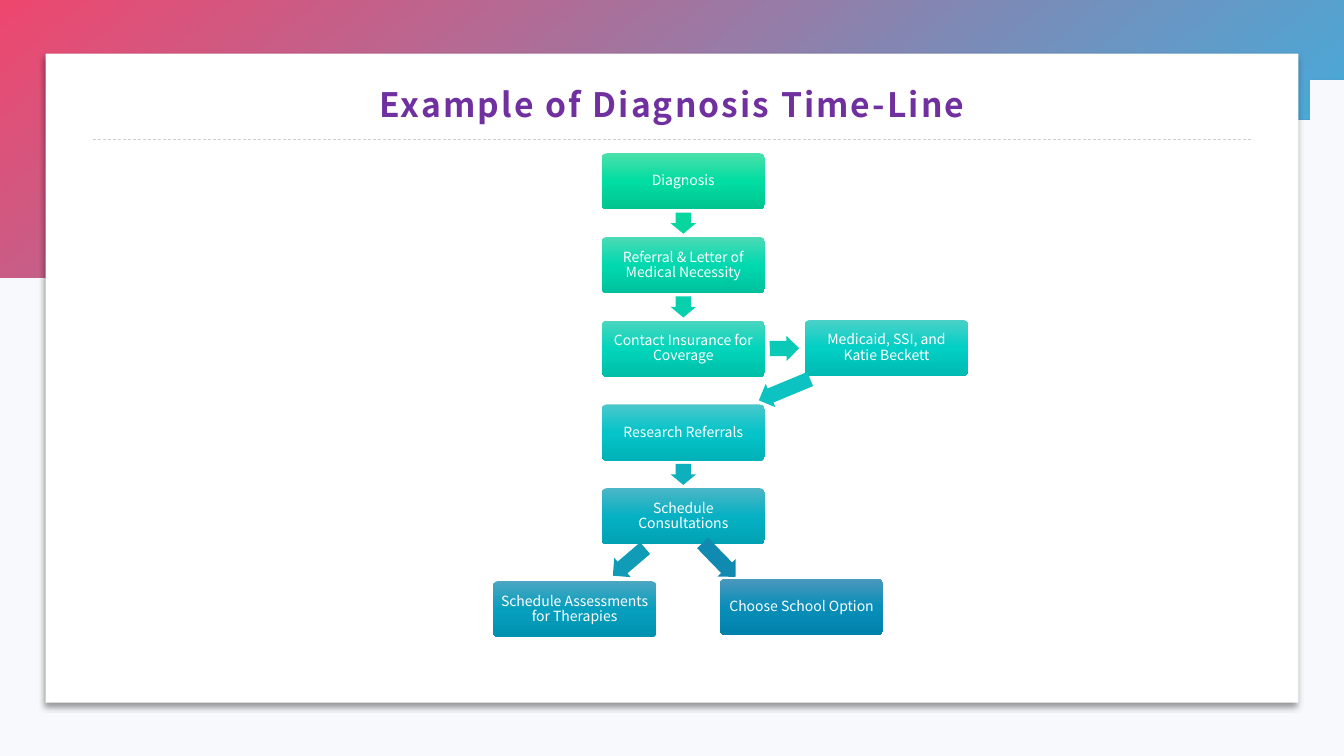
from copy import deepcopy

from lxml import etree
from pptx import Presentation
from pptx.dml.color import RGBColor
from pptx.enum.dml import MSO_LINE
from pptx.enum.shapes import MSO_CONNECTOR, MSO_SHAPE
from pptx.enum.text import MSO_ANCHOR, PP_ALIGN
from pptx.oxml.ns import qn
from pptx.util import Cm, Pt

RECTANGLE, ROUNDED = MSO_SHAPE.RECTANGLE, MSO_SHAPE.ROUNDED_RECTANGLE
ARROW = MSO_SHAPE.RIGHT_ARROW
STRAIGHT, DASH = MSO_CONNECTOR.STRAIGHT, MSO_LINE.DASH
MIDDLE, CENTER = MSO_ANCHOR.MIDDLE, PP_ALIGN.CENTER

WHITE = RGBColor(0xFF, 0xFF, 0xFF)
PURPLE = RGBColor(0x70, 0x30, 0xA0)
PALE = RGBColor(0xF8, 0xF9, 0xFC)
RULE_GREY = RGBColor(0xD0, 0xCE, 0xCE)
PINK = RGBColor(0xEE, 0x47, 0x6E)
SKY = RGBColor(0x2D, 0xBA, 0xEA)

FONT = "Noto Sans CJK JP"
TITLE_FONT = {"name": FONT, "size": Pt(24), "bold": True}
STEP_FONT = {"name": FONT, "size": Pt(10), "bold": False}

# Flow geometry in centimetres
BOX_W, BOX_H = 4.12, 1.42
COLUMN_X, COLUMN_TOP, PITCH = 15.16, 3.86, 2.11
ARROW_W, DOWN_LENGTH = 0.64, 0.53

# Text, left, top, gradient colours
STEPS = [
    ("Diagnosis", COLUMN_X, COLUMN_TOP, "4BE0AB 00DDA2 00C490"),
    ("Referral & Letter of Medical Necessity", COLUMN_X, COLUMN_TOP + PITCH,
     "4BDAB5 00D9AF 00C19C"),
    ("Contact Insurance for Coverage", COLUMN_X, COLUMN_TOP + 2 * PITCH,
     "4BD5BF 01D5BB 00BEA7"),
    ("Medicaid, SSI, and Katie Beckett", 20.28, 8.06, "4BD0C8 02CFC5 00BAB1"),
    ("Research Referrals", COLUMN_X, COLUMN_TOP + 3 * PITCH,
     "4BC7CB 04C4C9 00B2B7"),
    ("Schedule Consultations", COLUMN_X, COLUMN_TOP + 4 * PITCH,
     "4CB6C6 06B1C4 00A2B3"),
    ("Schedule Assessments for Therapies", 12.42, 14.64,
     "4CA6C1 079FBE 0092B0"),
    ("Choose School Option", 18.14, 14.58, "4C98BC 098EB9 0182AC"),
]

# Row above the arrow, colour
DOWN_ARROWS = [(0, "07D69F"), (1, "09D0AC"), (3, "0EB0BD")]

# Centre x, centre y, length, rotation, colour
BRANCH_ARROWS = [
    (19.77, 8.78, 0.74, 359.5, "0BC9B7"),
    (19.77, 9.82, 1.4, 157.4, "0CC3C1"),
    (15.85, 14.16, 1.07, 139.5, "109CB7"),
    (18.12, 14.11, 1.19, 45.8, "118AB1"),
]

# Lower edge of the wave: each curve is two control points and an end point
WAVE_START = (0, 6.55)
WAVE_CURVES = [
    ((3.1, 7.72), (6.76, 7.9), (9.98, 6.96)),
    ((13.46, 5.97), (16.46, 3.84), (20.12, 3.45)),
    ((23.77, 3.07), (27.64, 4.57), (31.17, 3.61)),
    ((32.18, 3.33), (33.12, 2.82), (33.86, 2.16)),
]


def curve_points(start, first, second, end, count=24):
    points = []
    for i in range(1, count + 1):
        t = i / count
        weights = ((1 - t) ** 3, 3 * t * (1 - t) ** 2, 3 * t * t * (1 - t), t ** 3)
        points.append(tuple(
            sum(w * p[axis] for w, p in zip(weights, (start, first, second, end)))
            for axis in (0, 1)))
    return points


def fill_gradient(shape, colours, angle):
    """Spread the colours evenly; the angle runs clockwise."""
    shape.fill.gradient()
    shape.fill.gradient_angle = 360 - angle
    stop_list = shape._element.spPr.find(qn("a:gradFill")).find(qn("a:gsLst"))
    while len(stop_list) < len(colours):
        stop_list.append(deepcopy(stop_list[0]))
    for i, (stop, colour) in enumerate(zip(shape.fill.gradient_stops, colours)):
        stop.position = i / (len(colours) - 1)
        stop.color.rgb = colour


def write_text(shape, text, font_format, colour, inset):
    frame = shape.text_frame
    frame_format = {"word_wrap": True, "vertical_anchor": MIDDLE,
                    "margin_left": Cm(inset), "margin_right": Cm(inset),
                    "margin_top": Cm(0.13), "margin_bottom": Cm(0.13)}
    for key, value in frame_format.items():
        setattr(frame, key, value)
    paragraph = frame.paragraphs[0]
    paragraph.alignment = CENTER
    paragraph.line_spacing = 0.9
    run = paragraph.add_run()
    run.text = text
    for key, value in font_format.items():
        setattr(run.font, key, value)
    run.font.color.rgb = colour
    return run


def add_plain_shape(slide, kind, left, top, width, height):
    shape = slide.shapes.add_shape(kind, Cm(left), Cm(top), Cm(width), Cm(height))
    shape.shadow.inherit = False
    shape.line.fill.background()
    return shape


def add_wave(slide):
    edge = [WAVE_START]
    for curve in WAVE_CURVES:
        edge += curve_points(edge[-1], *curve)
    builder = slide.shapes.build_freeform(0, 0, scale=Cm(1))
    builder.add_line_segments(edge + [(33.86, 0)], close=True)
    wave = builder.convert_to_shape()
    wave.shadow.inherit = False
    wave.line.fill.background()
    fill_gradient(wave, [PINK, SKY], 50)


def add_card(slide):
    card = add_plain_shape(slide, RECTANGLE, 1.15, 1.35, 31.57, 16.36)
    card.fill.solid()
    card.fill.fore_color.rgb = WHITE
    effects = card._element.spPr.find(qn("a:effectLst"))
    shadow = etree.SubElement(effects, qn("a:outerShdw"), blurRad=str(Pt(4)),
                              dist=str(Pt(3)), dir="5400000", algn="t",
                              rotWithShape="0")
    black = etree.SubElement(shadow, qn("a:srgbClr"), val="000000")
    etree.SubElement(black, qn("a:alpha"), val="40000")


def add_title(slide, text):
    rule = slide.shapes.add_connector(STRAIGHT, Cm(2.34), Cm(3.51), Cm(31.57), Cm(3.51))
    etree.SubElement(rule._element.spPr, qn("a:effectLst"))
    rule.line.color.rgb = RULE_GREY
    rule.line.width = Pt(0.5)
    rule.line.dash_style = DASH
    title = slide.shapes.add_textbox(Cm(2.34), Cm(1.88), Cm(29.21), Cm(1.63))
    run = write_text(title, text, TITLE_FONT, PURPLE, 0.25)
    run.font._element.set("spc", "150")


def add_step(slide, text, left, top, colours):
    step = add_plain_shape(slide, ROUNDED, left, top, BOX_W, BOX_H)
    step.adjustments[0] = 0.1
    fill_gradient(step, [RGBColor.from_string(c) for c in colours.split()], 90)
    write_text(step, text, STEP_FONT, WHITE, 0.15)


def add_arrow(slide, centre_x, centre_y, length, rotation, colour):
    arrow = add_plain_shape(slide, ARROW, centre_x - length / 2,
                            centre_y - ARROW_W / 2, length, ARROW_W)
    arrow.adjustments[0] = 0.6
    arrow.adjustments[1] = 0.5
    arrow.rotation = rotation
    arrow.fill.solid()
    arrow.fill.fore_color.rgb = RGBColor.from_string(colour)


def main():
    deck = Presentation()
    deck.slide_width, deck.slide_height = Cm(33.87), Cm(19.05)
    slide = deck.slides.add_slide(deck.slide_layouts[6])

    # Backdrop and heading
    slide.background.fill.solid()
    slide.background.fill.fore_color.rgb = PALE
    add_wave(slide)
    add_card(slide)
    add_title(slide, "Example of Diagnosis Time-Line")

    # Flow of steps
    for step in STEPS:
        add_step(slide, *step)
    for row, colour in DOWN_ARROWS:
        gap_middle = COLUMN_TOP + row * PITCH + (BOX_H + PITCH) / 2
        add_arrow(slide, COLUMN_X + BOX_W / 2, gap_middle, DOWN_LENGTH, 90, colour)
    for arrow in BRANCH_ARROWS:
        add_arrow(slide, *arrow)

    deck.save("out.pptx")


if __name__ == "__main__":
    main()
